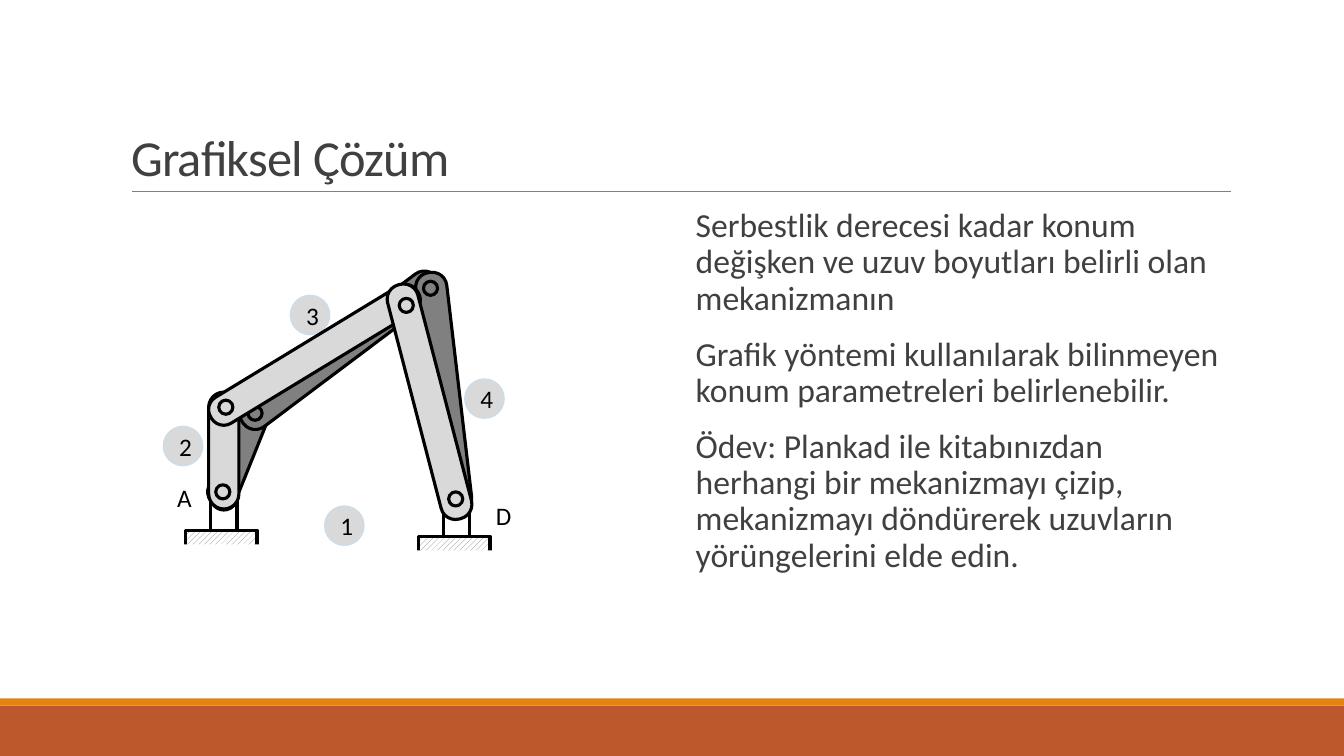
from dataclasses import dataclass

from lxml.etree import SubElement
from pptx import Presentation
from pptx.dml.color import RGBColor
from pptx.enum.dml import MSO_PATTERN
from pptx.enum.shapes import MSO_CONNECTOR, MSO_SHAPE
from pptx.enum.text import MSO_ANCHOR, MSO_AUTO_SIZE, PP_ALIGN
from pptx.oxml.ns import qn
from pptx.util import Inches, Pt


@dataclass(frozen=True)
class Theme:
    font: str = "Calibri"
    title_size: float = 36
    body_size: float = 24
    label_size: float = 18
    outline_width: float = 2.25
    badge_width: float = 1
    rule_width: float = 0.5
    text: str = "404040"
    black: str = "000000"
    white: str = "FFFFFF"
    rule: str = "808080"
    footer: str = "BD582C"
    accent: str = "E48312"
    dark_link: str = "808080"
    light_link: str = "D9D9D9"
    badge_line: str = "CCDDEA"


THEME = Theme()

BODY = [
    "Serbestlik derecesi kadar konum değişken ve uzuv boyutları belirli olan mekanizmanın",
    "Grafik yöntemi kullanılarak bilinmeyen konum parametreleri belirlenebilir.",
    "Ödev: Plankad ile kitabınızdan herhangi bir mekanizmayı çizip, "
    "mekanizmayı döndürerek uzuvların yörüngelerini elde edin.",
]
PIVOTS = [(2.22, 4.93), (4.53, 4.99)]
BADGES = [("1", 3.22, 5.02), ("2", 1.62, 4.23), ("3", 2.88, 2.93), ("4", 4.61, 3.76)]
LABELS = [("A", 1.66, 4.74), ("D", 4.82, 4.91)]

DARK_POSITION = [
    ((2.22, 3.9, 0.3, 1.16), 21.9, 0.5, []),
    ((2.17, 3.32, 2.4, 0.31), 323.1, 0.47, [(2.53, 4.1), (4.2, 2.84)]),
    ((3.2, 3.74, 2.4, 0.31), 263.3, 0.47, [(4.52, 4.94), (4.27, 2.86)]),
]
LIGHT_POSITION = [
    ((2.07, 3.89, 0.3, 1.16), 0, 0.5, [(2.21, 4.88)]),
    ((1.92, 3.37, 2.4, 0.3), 328.7, 0.47, [(2.24, 4.04)]),
    ((3.06, 3.83, 2.4, 0.31), 255.4, 0.47, [(4.52, 4.95), (4.03, 3.03)]),
]


def color(value):
    return RGBColor.from_string(value)


def format_runs(paragraph, size, text_color):
    for run in paragraph.runs:
        run.font.name = THEME.font
        run.font.size = Pt(size)
        run.font.color.rgb = color(text_color)


def add_figure(slide, kind, box, fill=None, line=None, width=THEME.outline_width):
    shape = slide.shapes.add_shape(kind, *map(Inches, box))
    shape.shadow.inherit = False
    if fill:
        shape.fill.solid()
        shape.fill.fore_color.rgb = color(fill)
    if line:
        shape.line.color.rgb = color(line)
        shape.line.width = Pt(width)
    else:
        shape.line.fill.background()
    return shape


def add_circle(slide, center, diameter, fill, line):
    x, y = center
    box = (x - diameter / 2, y - diameter / 2, diameter, diameter)
    return add_figure(slide, MSO_SHAPE.OVAL, box, fill, line)


def add_line(slide, start, end, line, width):
    connector = slide.shapes.add_connector(
        MSO_CONNECTOR.STRAIGHT, *map(Inches, (*start, *end)))
    connector.line.color.rgb = color(line)
    connector.line.width = Pt(width)
    SubElement(connector._element.spPr, qn("a:effectLst"))


def place(shape, box):
    shape.left, shape.top, shape.width, shape.height = map(Inches, box)


def fill_title(title, text):
    place(title, (1.2, 0.31, 11, 1.59))
    frame = title.text_frame
    frame.text = text
    frame.auto_size = MSO_AUTO_SIZE.NONE
    frame.vertical_anchor = MSO_ANCHOR.BOTTOM
    paragraph = frame.paragraphs[0]
    paragraph.alignment = PP_ALIGN.LEFT
    paragraph.line_spacing = 0.85
    format_runs(paragraph, THEME.title_size, THEME.text)
    paragraph.runs[0].font._element.set("spc", "-50")


def add_blank_bullet(paragraph):
    properties = paragraph._p.get_or_add_pPr()
    properties.set("marL", str(Inches(0.1)))
    properties.set("indent", str(Inches(-0.1)))
    bullet_color = SubElement(properties, qn("a:buClr"))
    SubElement(bullet_color, qn("a:srgbClr"), val=THEME.accent)
    SubElement(properties, qn("a:buChar"), char=" ")


def fill_body(body, texts):
    place(body, (6.8, 2.02, 5.4, 4.4))
    frame = body.text_frame
    frame.text = "\n".join(texts)
    frame.auto_size = MSO_AUTO_SIZE.NONE
    frame.margin_left = frame.margin_right = 0
    frame.vertical_anchor = MSO_ANCHOR.TOP
    for paragraph in frame.paragraphs:
        paragraph.alignment = PP_ALIGN.LEFT
        paragraph.line_spacing = 0.9
        paragraph.space_before = Pt(12)
        paragraph.space_after = Pt(2)
        add_blank_bullet(paragraph)
        format_runs(paragraph, THEME.body_size, THEME.text)


def add_ground(slide, pivot):
    x, y = pivot
    ground = add_figure(slide, MSO_SHAPE.RECTANGLE, (x - 0.38, y + 0.33, 0.71, 0.23),
                        line=THEME.black)
    ground.fill.patterned()
    ground.fill.pattern = MSO_PATTERN.WIDE_UPWARD_DIAGONAL
    ground.fill.fore_color.rgb = color(THEME.rule)
    ground.fill.back_color.rgb = color(THEME.white)
    add_figure(slide, MSO_SHAPE.RECTANGLE, (x - 0.44, y + 0.47, 0.81, 0.17), THEME.white)
    for side in (x - 0.13, x + 0.13):
        add_line(slide, (side, y), (side, y + 0.35), THEME.black, THEME.outline_width)


def add_links(slide, links, fill):
    for box, rotation, roundness, pins in links:
        link = add_figure(slide, MSO_SHAPE.ROUNDED_RECTANGLE, box, fill, THEME.black)
        link.adjustments[0] = roundness
        link.rotation = rotation
        for pin in pins:
            add_circle(slide, pin, 0.14, fill, THEME.black)


def add_badge(slide, text, left, top):
    badge = add_figure(slide, MSO_SHAPE.OVAL, (left, top, 0.39, 0.39),
                       THEME.light_link, THEME.badge_line, THEME.badge_width)
    frame = badge.text_frame
    frame.text = text
    frame.word_wrap = False
    frame.vertical_anchor = MSO_ANCHOR.MIDDLE
    format_runs(frame.paragraphs[0], THEME.label_size, THEME.black)


def add_label(slide, text, left, top):
    label = slide.shapes.add_textbox(*map(Inches, (left, top, 0.43, 0.5)))
    label.text_frame.text = text
    label.text_frame.word_wrap = False
    format_runs(label.text_frame.paragraphs[0], THEME.label_size, THEME.black)


def main():
    presentation = Presentation()
    presentation.slide_width = Inches(13.33)
    presentation.slide_height = Inches(7.5)
    slide = presentation.slides.add_slide(presentation.slide_layouts[1])

    add_figure(slide, MSO_SHAPE.RECTANGLE, (0, 7, 13.33, 0.5), THEME.footer)
    add_figure(slide, MSO_SHAPE.RECTANGLE, (0, 6.93, 13.33, 0.07), THEME.accent)
    add_line(slide, (1.31, 1.9), (12.21, 1.9), THEME.rule, THEME.rule_width)
    fill_title(slide.shapes.title, "Grafiksel Çözüm")
    fill_body(slide.placeholders[1], BODY)

    for pivot in PIVOTS:
        add_ground(slide, pivot)
    for badge in BADGES:
        add_badge(slide, *badge)
    for label in LABELS:
        add_label(slide, *label)
    add_links(slide, DARK_POSITION, THEME.dark_link)
    for pivot in PIVOTS:
        add_circle(slide, pivot, 0.26, THEME.light_link, THEME.black)
    add_links(slide, LIGHT_POSITION, THEME.light_link)

    presentation.save("out.pptx")


if __name__ == "__main__":
    main()
